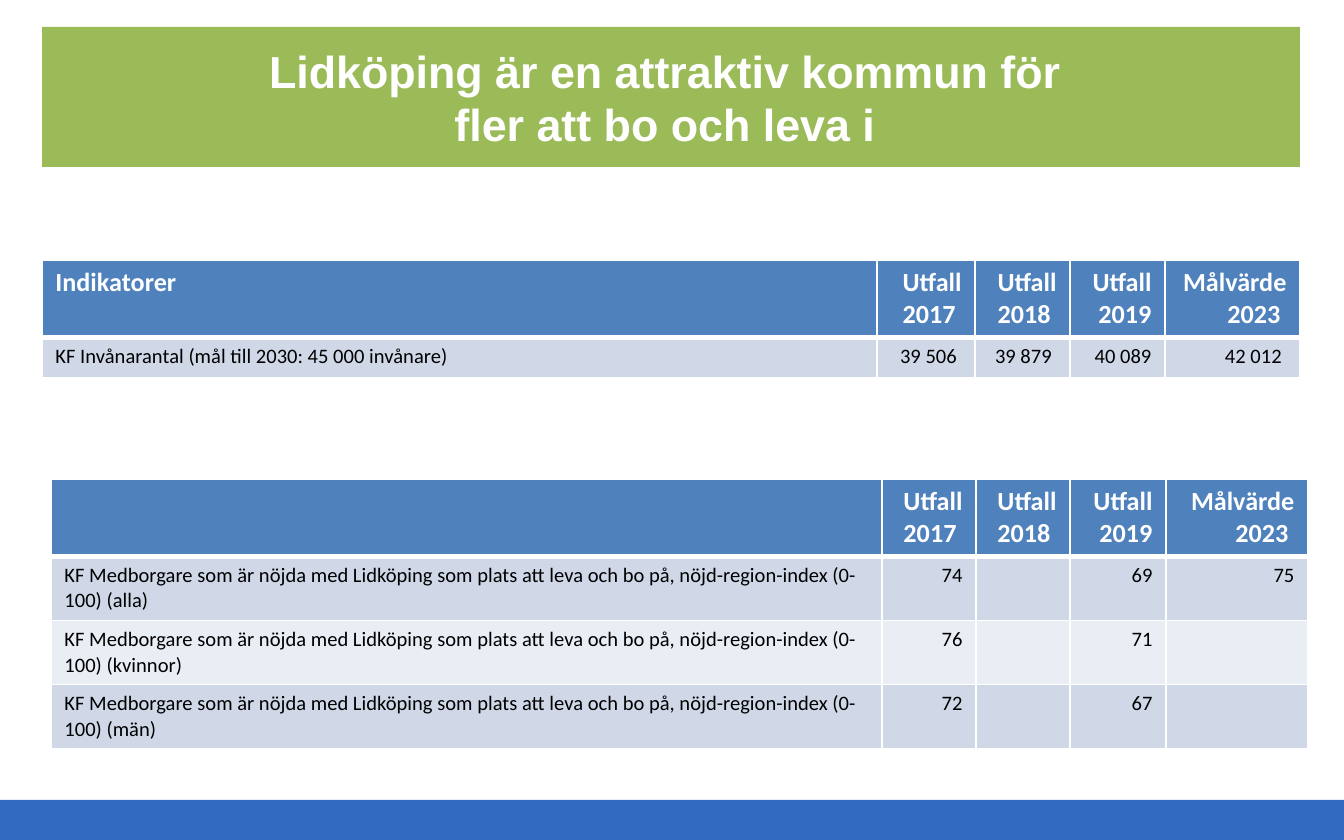
from pptx import Presentation
from pptx.dml.color import RGBColor
from pptx.enum.shapes import MSO_SHAPE
from pptx.enum.text import MSO_ANCHOR, MSO_AUTO_SIZE, PP_ALIGN
from pptx.oxml import parse_xml
from pptx.oxml.ns import nsdecls
from pptx.util import Pt

WHITE = RGBColor(0xFF, 0xFF, 0xFF)
BLACK = RGBColor(0, 0, 0)
GREEN = RGBColor(0x9B, 0xBB, 0x59)
FOOTER_BLUE = RGBColor(0x32, 0x6A, 0xC2)
HEADER_BLUE = RGBColor(0x4F, 0x81, 0xBD)
BANDS = [RGBColor(0xD0, 0xD8, 0xE8), RGBColor(0xE9, 0xED, 0xF4)]
YEARS = ["Utfall 2017 ", "Utfall 2018 ", "Utfall 2019", "Målvärde 2023 "]
INDEX = ("KF Medborgare som är nöjda med Lidköping som plats att leva och bo på, "
         "nöjd-region-index (0-100) ")


def px(n):
    return round(n * 914400 / 134.4)


class Deck:
    title_font, body_font = "Arial", "Calibri"

    def __init__(self, width, height):
        self.prs = Presentation()
        self.prs.slide_width, self.prs.slide_height = px(width), px(height)
        self.s = self.prs.slides.add_slide(self.prs.slide_layouts[5])

    def run(self, p, text, font, size, color, bold, align):
        p.alignment = align
        r = p.add_run()
        r.text = text
        r.font.name, r.font.size, r.font.bold = font, Pt(size), bold
        r.font.color.rgb = color

    def title(self, x, y, w, h, lines):
        sp = self.s.shapes.title
        sp.left, sp.top, sp.width, sp.height = map(px, (x, y, w, h))
        sp.fill.solid()
        sp.fill.fore_color.rgb = GREEN
        tf = sp.text_frame
        tf.word_wrap, tf.auto_size = True, MSO_AUTO_SIZE.NONE
        tf.vertical_anchor = MSO_ANCHOR.MIDDLE
        for i, line in enumerate(lines):
            p = tf.add_paragraph() if i else tf.paragraphs[0]
            self.run(p, line, self.title_font, 24, WHITE, True, PP_ALIGN.CENTER)

    def bar(self, x, y, w, h, color):
        sp = self.s.shapes.add_shape(MSO_SHAPE.RECTANGLE, *map(px, (x, y, w, h)))
        sp.shadow.inherit = False
        sp.fill.solid()
        sp.fill.fore_color.rgb = color
        sp.line.fill.background()

    def borders(self, cell, top, bottom):
        tc_pr = cell._tc.get_or_add_tcPr()
        for side, width in zip("LRTB", (1, 1, top, bottom)):
            tc_pr.append(parse_xml(
                f'<a:ln{side} {nsdecls("a")} w="{Pt(width)}"><a:solidFill>'
                f'<a:srgbClr val="{WHITE}"/></a:solidFill></a:ln{side}>'))

    def table(self, x, y, widths, heights, rows):
        table = self.s.shapes.add_table(
            len(rows), len(widths), px(x), px(y), px(sum(widths)), px(sum(heights))).table
        for column, w in zip(table.columns, widths):
            column.width = px(w)
        for i, (row, h) in enumerate(zip(rows, heights)):
            table.rows[i].height = px(h)
            head = i == 0
            for j, text in enumerate(row):
                cell = table.cell(i, j)
                self.borders(cell, 3 if i == 1 else 1, 3 if head else 1)
                cell.fill.solid()
                cell.fill.fore_color.rgb = HEADER_BLUE if head else BANDS[(i - 1) % 2]
                if text:
                    self.run(cell.text_frame.paragraphs[0], text, self.body_font,
                             14 if head else 11, WHITE if head else BLACK, head,
                             PP_ALIGN.RIGHT if j else PP_ALIGN.LEFT)


def main():
    deck = Deck(1344, 840)
    deck.bar(0, 800, 1344, 40, FOOTER_BLUE)
    deck.title(42, 27, 1258, 140,
               ["Lidköping är en attraktiv kommun för ", "fler att bo och leva i "])
    deck.table(42, 260, [835, 98, 95, 95, 135], [76, 41], [
        ["Indikatorer", *YEARS],
        ["KF Invånarantal (mål till 2030: 45 000 invånare)",
         "39 506 ", "39 879 ", "40 089", "42 012 "],
    ])
    deck.table(51, 479, [831, 94, 94, 96, 142], [77, 64, 64, 64], [
        ["", *YEARS],
        [INDEX + "(alla)", "74", "", "69", "75"],
        [INDEX + "(kvinnor)", "76", "", "71", ""],
        [INDEX + "(män)", "72", "", "67", ""],
    ])
    deck.prs.save("out.pptx")


if __name__ == "__main__":
    main()
